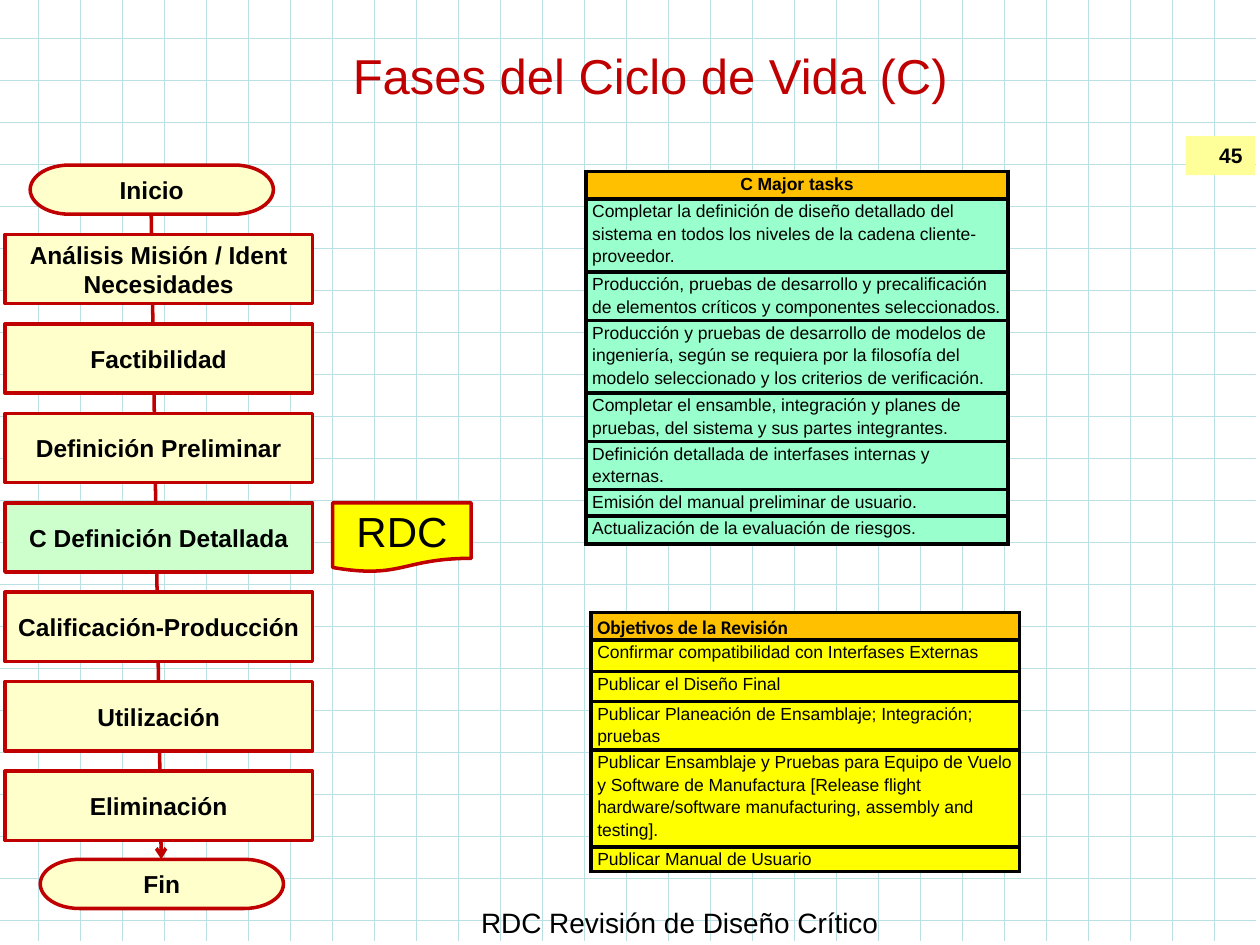
from dataclasses import dataclass

from lxml.etree import SubElement
from pptx import Presentation
from pptx.dml.color import RGBColor
from pptx.enum.dml import MSO_LINE
from pptx.enum.shapes import MSO_CONNECTOR, MSO_SHAPE
from pptx.enum.text import MSO_ANCHOR, PP_ALIGN
from pptx.oxml.ns import qn
from pptx.util import Inches, Pt


@dataclass(frozen=True)
class Theme:
    font: str = "Arial"
    header_font: str = "Calibri"
    ink: str = "000000"
    accent: str = "C00000"
    grid: str = "BBE0E3"
    step: str = "FFFFCC"
    current_step: str = "CCFFCC"
    yellow: str = "FFFF00"
    page: str = "FFFF99"
    header: str = "FFC000"
    tasks: str = "99FFCC"
    title_size: int = 28
    review_size: int = 24
    caption_size: int = 16
    step_size: int = 14
    page_size: int = 12
    header_size: int = 11
    cell_size: int = 10
    grid_width: float = 0.25
    outline_width: float = 2
    border_width: float = 2.25


THEME = Theme()

STEPS = [
    "Análisis Misión / Ident Necesidades",
    "Factibilidad",
    "Definición Preliminar",
    "C Definición Detallada",
    "Calificación-Producción",
    "Utilización",
    "Eliminación",
]
CURRENT_STEP = 3
STEP_TOP, STEP_PITCH, STEP_HEIGHT = 1.86, 0.71, 0.55

TASKS = [
    ("C Major tasks", 0.22),
    ("Completar la definición de diseño detallado del sistema en todos los niveles "
     "de la cadena cliente-proveedor.", 0.58),
    ("Producción, pruebas de desarrollo y precalificación de elementos críticos y "
     "componentes seleccionados.", 0.38),
    ("Producción y pruebas de desarrollo de modelos de ingeniería, según se requiera "
     "por la filosofía del modelo seleccionado y los criterios de verificación.", 0.57),
    ("Completar el ensamble, integración y planes de pruebas, del sistema y sus "
     "partes integrantes.", 0.38),
    ("Definición detallada de interfases internas y externas.", 0.38),
    ("Emisión del manual preliminar de usuario.", 0.21),
    ("Actualización de la evaluación de riesgos.", 0.22),
]
OBJECTIVES = [
    ("Objetivos de la Revisión", 0.22),
    ("Confirmar compatibilidad con Interfases Externas", 0.25),
    ("Publicar el Diseño Final", 0.24),
    ("Publicar Planeación de Ensamblaje; Integración; pruebas", 0.38),
    ("Publicar Ensamblaje y Pruebas para Equipo de Vuelo y Software de Manufactura "
     "[Release flight hardware/software manufacturing, assembly and testing].", 0.77),
    ("Publicar Manual de Usuario", 0.19),
]


def write(frame, text, size, bold=False, align=PP_ALIGN.CENTER, color=THEME.ink,
          font=THEME.font, anchor=MSO_ANCHOR.MIDDLE):
    frame.word_wrap = True
    frame.vertical_anchor = anchor
    paragraph = frame.paragraphs[0]
    paragraph.text = text
    paragraph.alignment = align
    paragraph.font.name = font
    paragraph.font.size = Pt(size)
    paragraph.font.bold = bold
    paragraph.font.color.rgb = RGBColor.from_string(color)
    return paragraph


def add_line(slide, start, end, color, width):
    line = slide.shapes.add_connector(
        MSO_CONNECTOR.STRAIGHT, *map(Inches, start), *map(Inches, end))
    line.line.color.rgb = RGBColor.from_string(color)
    line.line.width = Pt(width)
    SubElement(line._element.spPr, qn("a:effectLst"))
    return line


def add_grid(slide):
    rows = [0.3 + i / 3 for i in range(22)]
    columns = [0.3 + i / 3 for i in range(29)]
    ends = [((-0.04, y), (9.96, y)) for y in rows]
    ends += [((x, -0.04), (x, 7.46)) for x in columns]
    for start, end in ends:
        rule = add_line(slide, start, end, THEME.grid, THEME.grid_width)
        rule.line.dash_style = MSO_LINE.ROUND_DOT


def add_title(slide, text):
    title = slide.shapes.title
    title.left, title.top, title.width, title.height = map(Inches, (1.46, 0.13, 7.4, 0.93))
    write(title.text_frame, text, THEME.title_size, color=THEME.accent)
    slide.shapes._spTree.append(title._element)


def add_box(slide, kind, bounds, fill, text, size, outlined=True, **style):
    box = slide.shapes.add_shape(kind, *map(Inches, bounds))
    box.shadow.inherit = False
    box.fill.solid()
    box.fill.fore_color.rgb = RGBColor.from_string(fill)
    if outlined:
        box.line.color.rgb = RGBColor.from_string(THEME.accent)
        box.line.width = Pt(THEME.outline_width)
        box.text_frame.margin_left = box.text_frame.margin_right = Inches(0.05)
    else:
        box.line.fill.background()
    write(box.text_frame, text, size, **style)


def add_flow(slide):
    flow = add_line(slide, (1.2, 1.7), (1.28, 6.82), THEME.accent, THEME.outline_width)
    SubElement(flow.line._get_or_add_ln(), qn("a:tailEnd"), type="arrow")
    for text, left, top in (("Inicio", 0.24, 1.31), ("Fin", 0.32, 6.82)):
        add_box(slide, MSO_SHAPE.FLOWCHART_TERMINATOR, (left, top, 1.93, 0.39),
                THEME.step, text, THEME.step_size, bold=True)
    for i, text in enumerate(STEPS):
        fill = THEME.current_step if i == CURRENT_STEP else THEME.step
        add_box(slide, MSO_SHAPE.FLOWCHART_PROCESS,
                (0.04, STEP_TOP + i * STEP_PITCH, 2.44, STEP_HEIGHT),
                fill, text, THEME.step_size, bold=True)
    add_box(slide, MSO_SHAPE.FLOWCHART_DOCUMENT,
            (2.64, STEP_TOP + CURRENT_STEP * STEP_PITCH, 1.1, STEP_HEIGHT),
            THEME.yellow, "RDC", THEME.review_size)


def add_borders(cell):
    properties = cell._tc.get_or_add_tcPr()
    for side in ("a:lnL", "a:lnR", "a:lnT", "a:lnB"):
        border = SubElement(properties, qn(side), w=str(Pt(THEME.border_width)))
        fill = SubElement(border, qn("a:solidFill"))
        SubElement(fill, qn("a:srgbClr"), val=THEME.ink)


def add_list_table(slide, left, top, width, rows, body_fill, header_style):
    height = sum(row_height for _, row_height in rows)
    table = slide.shapes.add_table(
        len(rows), 1, *map(Inches, (left, top, width, height))).table
    table.first_row = table.horz_banding = False
    body_style = dict(size=THEME.cell_size, align=PP_ALIGN.LEFT, anchor=MSO_ANCHOR.TOP)
    for i, (text, row_height) in enumerate(rows):
        table.rows[i].height = Inches(row_height)
        cell = table.cell(i, 0)
        cell.margin_left = cell.margin_right = Inches(0.05)
        cell.margin_top = cell.margin_bottom = 0
        style = body_style if i else {**body_style, "bold": True, **header_style}
        cell.vertical_anchor = style["anchor"]
        add_borders(cell)
        cell.fill.solid()
        cell.fill.fore_color.rgb = RGBColor.from_string(body_fill if i else THEME.header)
        write(cell.text_frame, text, **style).line_spacing = 1.15


def add_caption(slide, text):
    caption = slide.shapes.add_textbox(*map(Inches, (2.48, 7.14, 5.83, 0.37)))
    write(caption.text_frame, text, THEME.caption_size, anchor=MSO_ANCHOR.TOP)


def main():
    deck = Presentation()
    deck.slide_width, deck.slide_height = Inches(10), Inches(7.5)
    slide = deck.slides.add_slide(deck.slide_layouts[5])
    add_grid(slide)
    add_title(slide, "Fases del Ciclo de Vida (C)")
    add_box(slide, MSO_SHAPE.RECTANGLE, (9.41, 1.08, 0.55, 0.31), THEME.page, "45",
            THEME.page_size, outlined=False, bold=True, align=PP_ALIGN.RIGHT)
    add_flow(slide)
    add_caption(slide, "RDC Revisión de Diseño Crítico")
    add_list_table(slide, 4.69, 4.86, 3.4, OBJECTIVES, THEME.yellow,
                   dict(size=THEME.header_size, font=THEME.header_font,
                        anchor=MSO_ANCHOR.BOTTOM))
    add_list_table(slide, 4.65, 1.36, 3.35, TASKS, THEME.tasks,
                   dict(align=PP_ALIGN.CENTER))
    deck.save("out.pptx")


if __name__ == "__main__":
    main()
